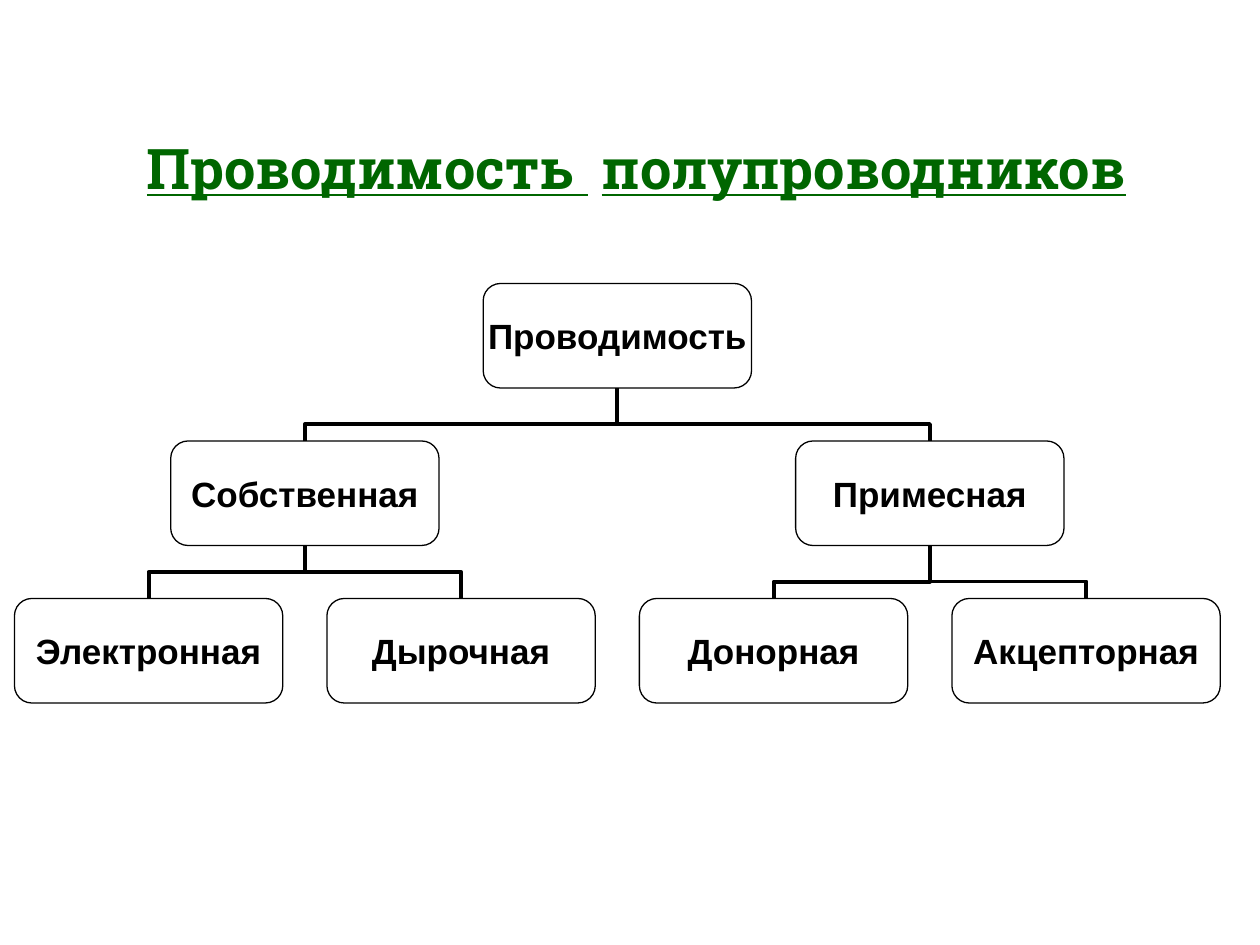
from dataclasses import dataclass

from lxml import etree
from pptx import Presentation
from pptx.dml.color import RGBColor
from pptx.enum.shapes import MSO_CONNECTOR, MSO_SHAPE
from pptx.enum.text import MSO_ANCHOR, PP_ALIGN
from pptx.oxml.ns import qn
from pptx.util import Inches, Pt

ELBOW = MSO_CONNECTOR.ELBOW
ROUNDED = MSO_SHAPE.ROUNDED_RECTANGLE
MIDDLE = MSO_ANCHOR.MIDDLE
CENTER = PP_ALIGN.CENTER
TITLE_ONLY = 5
TOP_SITE, BOTTOM_SITE = 0, 2


@dataclass(frozen=True)
class Theme:
    title_color: RGBColor = RGBColor(0x00, 0x66, 0x00)
    ink: RGBColor = RGBColor(0x00, 0x00, 0x00)
    title_font: str = "Roboto Slab"
    body_font: str = "Arial"
    title_size: int = 32
    body_size: int = 20
    word_gap: int = 8
    outline: float = 0.75
    branch: float = 2.25


@dataclass(frozen=True)
class Grid:
    left: float = 1.18
    top: float = 2.25
    column: float = 1.24
    row: float = 1.25
    box_width: float = 2.13
    box_height: float = 0.83


class TreeSlide:
    def __init__(self, deck, theme, grid):
        self.theme = theme
        self.grid = grid
        self.page = deck.slides.add_slide(deck.slide_layouts[TITLE_ONLY])

    def style(self, para, name, size, color):
        para.alignment = CENTER
        para.font.name = name
        para.font.size = Pt(size)
        para.font.bold = True
        para.font.color.rgb = color

    def title(self, words):
        theme = self.theme
        box = self.page.shapes.title
        box.left, box.top = Inches(0.55), Inches(0.7)
        box.width, box.height = Inches(9), Inches(1.25)
        box.text_frame.vertical_anchor = MIDDLE
        para = box.text_frame.paragraphs[0]
        first, second = words
        for text in (first, " ", second):
            span = para.add_run()
            span.text = text
            if text == " ":
                span.font._element.set("spc", str(theme.word_gap * 100))
        self.style(para, theme.title_font, theme.title_size, theme.title_color)
        para.font.underline = True

    def node(self, text, column, row):
        grid, theme = self.grid, self.theme
        center = grid.left + column * grid.column
        box = self.page.shapes.add_shape(
            ROUNDED,
            Inches(center - grid.box_width / 2),
            Inches(grid.top + row * grid.row),
            Inches(grid.box_width),
            Inches(grid.box_height),
        )
        box.shadow.inherit = False
        box.fill.background()
        box.line.color.rgb = theme.ink
        box.line.width = Pt(theme.outline)
        frame = box.text_frame
        frame.margin_left = frame.margin_right = 0
        frame.margin_top = frame.margin_bottom = 0
        frame.word_wrap = False
        frame.vertical_anchor = MIDDLE
        para = frame.paragraphs[0]
        para.text = text
        self.style(para, theme.body_font, theme.body_size, theme.ink)
        return box

    def branch(self, child, parent, bend):
        start_x = child.left + child.width // 2
        end_x = parent.left + parent.width // 2
        start_y, end_y = child.top, parent.top + parent.height
        line = self.page.shapes.add_connector(ELBOW, start_x, start_y, end_x, end_y)
        line.begin_connect(child, TOP_SITE)
        line.end_connect(parent, BOTTOM_SITE)
        line.line.color.rgb = self.theme.ink
        line.line.width = Pt(self.theme.branch)

        rise, run = start_y - end_y, abs(start_x - end_x)
        line.left = (start_x + end_x - rise) // 2
        line.top = (start_y + end_y - run) // 2
        line.width, line.height = rise, run
        properties = line._element.spPr
        frame = properties.find(qn("a:xfrm"))
        frame.attrib.pop("flipH", None)
        frame.set("rot", str(270 * 60000))
        frame.set("flipV", "1" if start_x > end_x else "0")
        guides = properties.find(qn("a:prstGeom")).find(qn("a:avLst"))
        etree.SubElement(
            guides, qn("a:gd"), name="adj1", fmla=f"val {round(bend * 100000)}"
        )
        etree.SubElement(properties, qn("a:effectLst"))


def main():
    deck = Presentation()
    deck.slide_width, deck.slide_height = Inches(10), Inches(7.5)
    tree = TreeSlide(deck, Theme(), Grid())
    tree.title(("Проводимость", "полупроводников"))

    root = tree.node("Проводимость", 3, 0)
    families = (
        ("Собственная", 1, 0.5, ("Электронная", "Дырочная")),
        ("Примесная", 5, 0.32, ("Донорная", "Акцепторная")),
    )
    for name, column, bend, kinds in families:
        family = tree.node(name, column, 1)
        tree.branch(family, root, 0.32)
        for kind, side in zip(kinds, (-1, 1)):
            tree.branch(tree.node(kind, column + side, 2), family, bend)

    deck.save("out.pptx")


if __name__ == "__main__":
    main()
